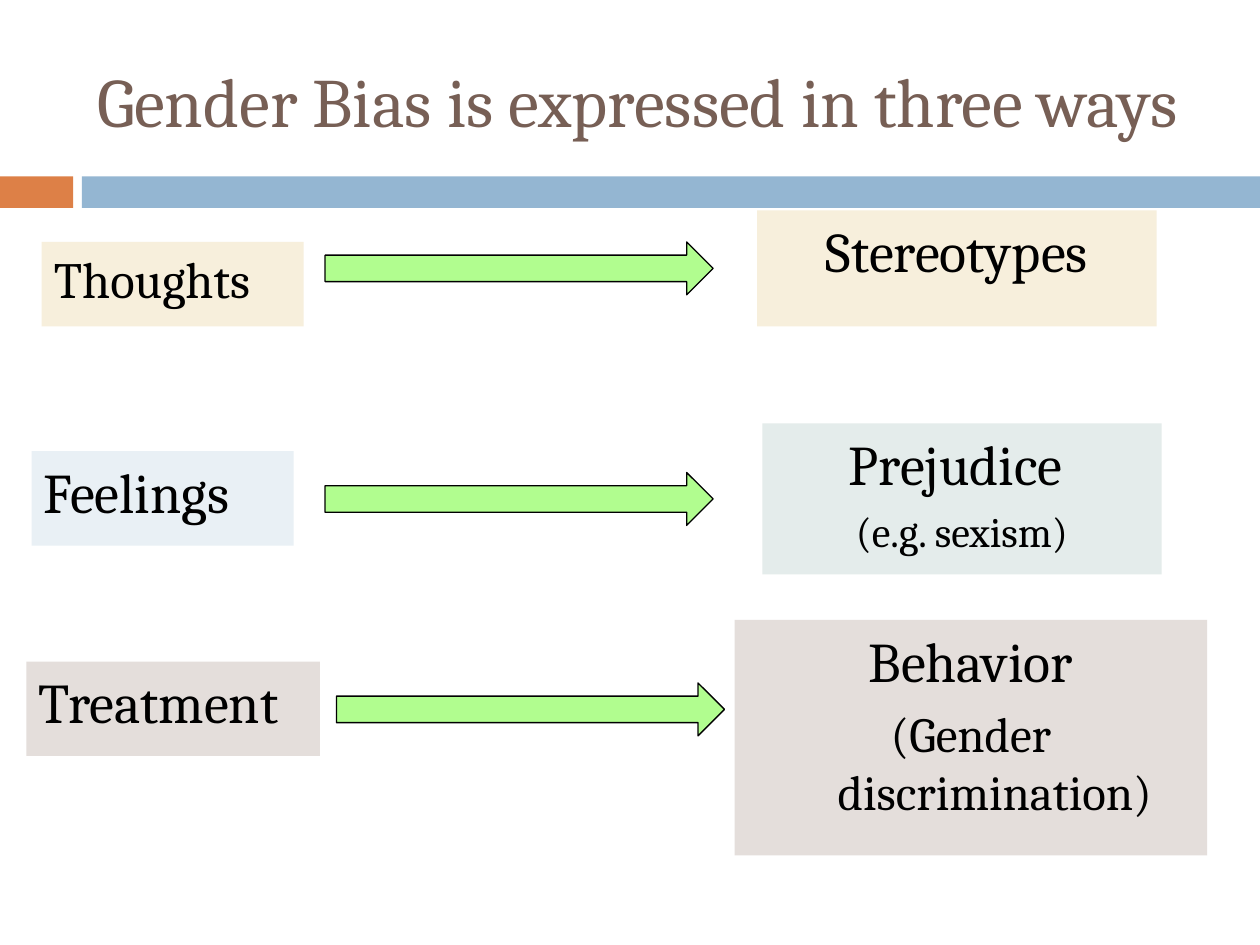
from dataclasses import dataclass

from pptx import Presentation
from pptx.dml.color import RGBColor as RGB
from pptx.enum.shapes import MSO_SHAPE as Shape
from pptx.enum.text import MSO_ANCHOR as Anchor, MSO_AUTO_SIZE as AutoSize, PP_ALIGN as Align
from pptx.util import Inches, Pt


@dataclass(frozen=True)
class Theme:
    font: str = "Cambria"
    ink: str = "000000"
    title: str = "775F55"
    orange: str = "DD8047"
    blue: str = "94B6D2"
    cream: str = "F7EFDC"
    pale_blue: str = "E9F0F5"
    pale_green: str = "E4ECEB"
    taupe: str = "E4DEDB"
    arrow: str = "B1FD8F"
    title_size: float = 39.6
    main_size: int = 32
    thoughts_size: int = 29
    detail_size: int = 28
    example_size: int = 24


def write(paragraph, text, *, font, size, color, align=Align.LEFT, hang=0, before=0):
    """Set the text of a paragraph and its format."""
    if hang:
        properties = paragraph._p.get_or_add_pPr()
        properties.set("marL", str(Inches(hang)))
        properties.set("indent", str(-Inches(hang)))
    paragraph.alignment = align
    if before:
        paragraph.space_before = Pt(before)
    run = paragraph.add_run()
    run.text = text
    run.font.name = font
    run.font.size = Pt(size)
    run.font.color.rgb = RGB.from_string(color)


class SlideBuilder:
    def __init__(self, slide, theme):
        self.slide = slide
        self.theme = theme

    def title(self, text, left, top, width, height):
        heading = self.slide.shapes.title
        heading.left, heading.top = Inches(left), Inches(top)
        heading.width, heading.height = Inches(width), Inches(height)
        frame = heading.text_frame
        frame.auto_size = AutoSize.NONE
        frame.vertical_anchor = Anchor.MIDDLE
        write(frame.paragraphs[0], text, font=self.theme.font,
              size=self.theme.title_size, color=self.theme.title)

    def shape(self, kind, place, fill, line=None):
        item = self.slide.shapes.add_shape(kind, *map(Inches, place))
        item.shadow.inherit = False
        item.fill.solid()
        item.fill.fore_color.rgb = RGB.from_string(fill)
        if line:
            item.line.color.rgb = RGB.from_string(line)
            item.line.width = Pt(0.75)
        else:
            item.line.fill.background()
        return item

    def box(self, place, fill, lines, align=Align.LEFT):
        """A filled box; each line is its text and size."""
        frame = self.shape(Shape.RECTANGLE, place, fill).text_frame
        frame.word_wrap = True
        frame.vertical_anchor = Anchor.TOP
        for index, (text, size) in enumerate(lines):
            paragraph = frame.add_paragraph() if index else frame.paragraphs[0]
            write(paragraph, text, font=self.theme.font, size=size,
                  color=self.theme.ink, align=align, hang=0.38,
                  before=0.2 * size if index else 0)

    def arrow(self, left, top):
        self.shape(Shape.RIGHT_ARROW, (left, top, 3.08, 0.42),
                   self.theme.arrow, self.theme.ink)


def main():
    theme = Theme()
    deck = Presentation()
    deck.slide_width, deck.slide_height = Inches(10), Inches(7.5)
    builder = SlideBuilder(deck.slides.add_slide(deck.slide_layouts[5]), theme)

    # Header band and title
    builder.shape(Shape.RECTANGLE, (0, 1.4, 0.58, 0.25), theme.orange)
    builder.shape(Shape.RECTANGLE, (0.65, 1.4, 9.35, 0.25), theme.blue)
    builder.title("Gender Bias is expressed in three ways", 0.67, 0.25, 8.92, 1.08)

    # Where bias lives
    sources = [
        ("Thoughts", theme.thoughts_size, (0.33, 1.92, 2.08, 0.67), theme.cream),
        ("Feelings", theme.main_size, (0.25, 3.58, 2.08, 0.75), theme.pale_blue),
        ("Treatment", theme.main_size, (0.21, 5.25, 2.33, 0.75), theme.taupe),
    ]
    for name, size, place, fill in sources:
        builder.box(place, fill, [(name, size)])

    # How it is expressed
    expressions = [
        ([("Stereotypes", theme.main_size)], (6.01, 1.67, 3.17, 0.92), theme.cream),
        ([("Prejudice ", theme.main_size), ("(e.g. sexism)", theme.example_size)],
         (6.05, 3.36, 3.17, 1.2), theme.pale_green),
        ([("Behavior", theme.main_size), ("(Gender discrimination)", theme.detail_size)],
         (5.83, 4.92, 3.75, 1.87), theme.taupe),
    ]
    for lines, place, fill in expressions:
        builder.box(place, fill, lines, Align.CENTER)

    # Arrows from source to expression
    for left, top in [(2.58, 1.92), (2.58, 3.75), (2.67, 5.42)]:
        builder.arrow(left, top)

    deck.save("out.pptx")


if __name__ == "__main__":
    main()
